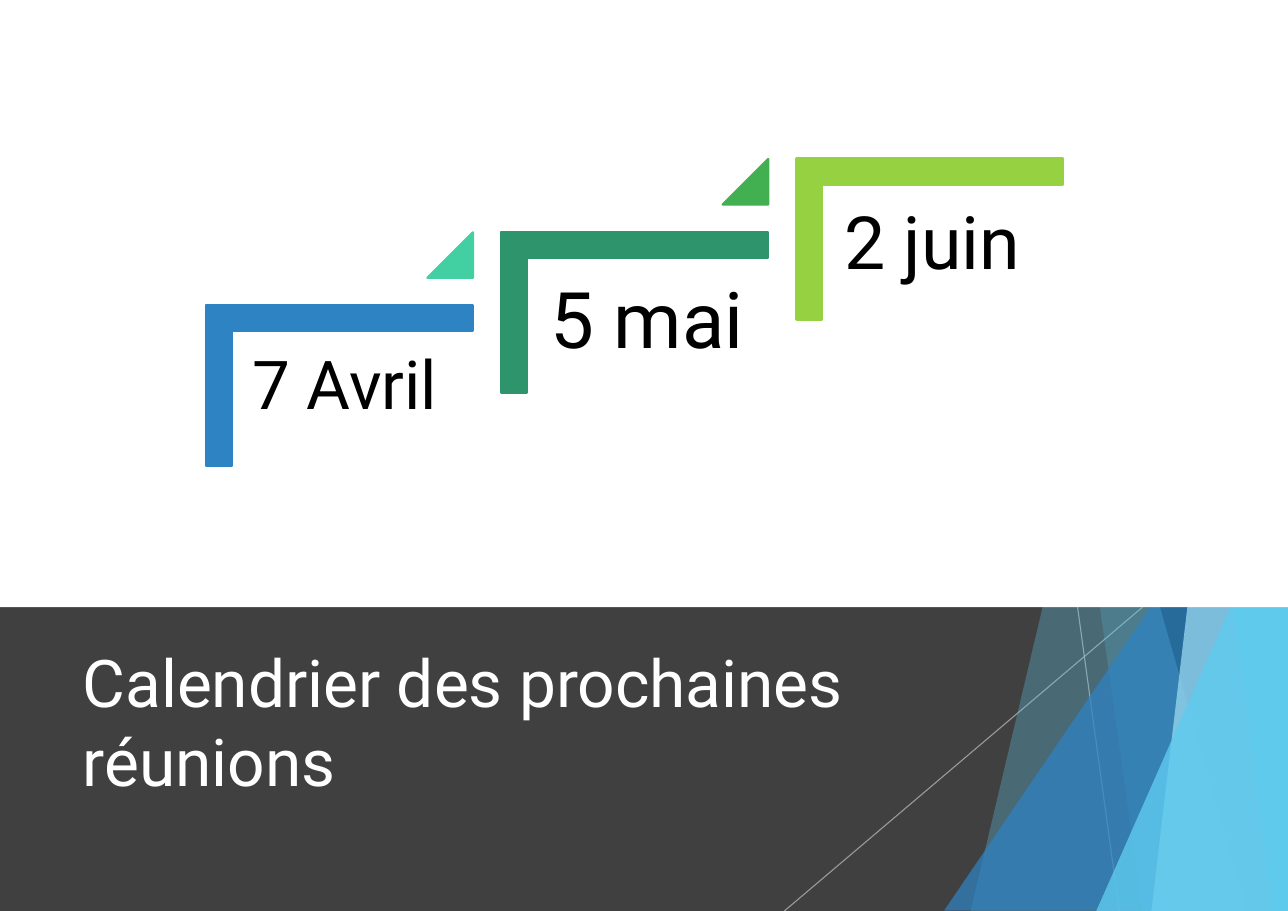
from lxml import etree
from pptx import Presentation
from pptx.dml.color import RGBColor
from pptx.enum.shapes import MSO_CONNECTOR, MSO_SHAPE
from pptx.enum.text import MSO_ANCHOR, MSO_AUTO_SIZE, PP_ALIGN
from pptx.oxml.ns import qn
from pptx.util import Pt

RECT = MSO_SHAPE.RECTANGLE
CORNER = MSO_SHAPE.CORNER
WEDGE = MSO_SHAPE.ISOSCELES_TRIANGLE
STRAIGHT = MSO_CONNECTOR.STRAIGHT
MIDDLE = MSO_ANCHOR.MIDDLE
LEFT = PP_ALIGN.LEFT
FIXED = MSO_AUTO_SIZE.NONE

FONT = "Roboto"
WIDTH, HEIGHT = 841.68, 595.44
SPLIT = 396.9

COLORS = {
    "white": "FFFFFF",
    "black": "000000",
    "panel": "404040",
    "ray": "BFBFBF",
    "sky": "5FCBEF",
    "pale": "9FE0F5",
    "blue": "2E83C3",
    "navy": "226292",
    "mint": "42D0A2",
    "teal": "2E946B",
    "green": "42B051",
    "lime": "96D141",
}

# Text, size, inset, bracket color, color of the wedge leading to the next step
STEPS = [
    ("7 Avril", 44, 12.9, "blue", "mint"),
    ("5 mai", 51, 14.9, "teal", "green"),
    ("2 juin", 48, 14.1, "lime", None),
]
STEP_X, STEP_Y = 169.2, 164.9
RUN, RISE = 192.9, 47.9


def rgb(name):
    return RGBColor.from_string(COLORS[name])


def paint(fill, color, alpha=100):
    """Set a solid fill with its opacity in percent."""
    fill.solid()
    fill.fore_color.rgb = rgb(color)
    if alpha < 100:
        node = fill._xPr.find(".//" + qn("a:srgbClr"))
        etree.SubElement(node, qn("a:alpha"), val=str(alpha * 1000))


def finish(shape, color, alpha=100, edge=0):
    shape.shadow.inherit = False
    paint(shape.fill, color, alpha)
    if edge:
        shape.line.width = Pt(edge)
        shape.line.color.rgb = rgb(color)
    else:
        shape.line.fill.background()


def add_form(slide, kind, box, color, alpha=100, edge=0, adjust=()):
    shape = slide.shapes.add_shape(kind, *map(Pt, box))
    for i, value in enumerate(adjust):
        shape.adjustments[i] = value
    finish(shape, color, alpha, edge)
    return shape


def add_shard(slide, top, base, color, alpha):
    """Fill from a slanted left edge to the right side of the slide."""
    points = [(WIDTH, 0), (WIDTH, HEIGHT), (base, HEIGHT)]
    form = slide.shapes.build_freeform(Pt(top), 0)
    form.add_line_segments([(Pt(x), Pt(y)) for x, y in points], close=True)
    finish(form.convert_to_shape(), color, alpha)


def add_ray(slide, top, base):
    ray = slide.shapes.add_connector(
        STRAIGHT, Pt(top), Pt(SPLIT), Pt(base), Pt(HEIGHT))
    ray.line.width = Pt(0.75)
    paint(ray.line.fill, "ray", 70)
    etree.SubElement(ray._element.spPr, qn("a:effectLst"))


def style(par, size, color):
    par.font.name = FONT
    par.font.size = Pt(size)
    par.font.color.rgb = rgb(color)
    par.alignment = LEFT


def add_label(slide, box, text, size, inset):
    frame = slide.shapes.add_textbox(*map(Pt, box)).text_frame
    frame.word_wrap = True
    frame.margin_left = frame.margin_right = Pt(inset)
    frame.margin_top = frame.margin_bottom = Pt(inset)
    frame.text = text
    par = frame.paragraphs[0]
    par.line_spacing = 0.9
    style(par, size, "black")


def add_step(slide, x, y, text, size, inset, color, next_color):
    bracket = add_form(slide, CORNER, (x, y, 105.1, 174.2), color,
                       edge=1.5, adjust=(0.161, 0.161))
    bracket.rotation = 90
    add_label(slide, (x - 17.3, y + 51.8, 157.7, 138.2), text, size, inset)
    if next_color:
        add_form(slide, WEDGE, (x + 110.2, y - 13, 29.7, 29.7),
                 next_color, edge=1.5, adjust=(1,))


def add_title(slide, text):
    title = slide.shapes.title
    title.left, title.top = Pt(46.8), Pt(414)
    title.width, title.height = Pt(593.3), Pt(114.5)
    frame = title.text_frame
    frame.text = text
    frame.word_wrap = True
    frame.auto_size = FIXED
    frame.vertical_anchor = MIDDLE
    style(frame.paragraphs[0], 43, "white")
    title._element.getparent().append(title._element)


def add_facets(slide):
    add_ray(slide, 704.2, 731.5)
    add_ray(slide, 746.6, 512.6)
    add_shard(slide, 775.4, 634.3, "sky", 30)
    add_shard(slide, 663.1, 746.6, "sky", 20)
    add_form(slide, WEDGE, (617, 264.2, 225, 331), "blue", 72, adjust=(1,))
    add_shard(slide, 644.4, 815, "navy", 70)
    add_shard(slide, 823, 752.4, "pale", 70)
    add_shard(slide, 755.3, 831.6, "sky", 65)
    add_form(slide, WEDGE, (716.4, 311.8, 125.3, 283.7), "sky", 80, adjust=(1,))


def main():
    deck = Presentation()
    deck.slide_width, deck.slide_height = Pt(WIDTH), Pt(HEIGHT)
    slide = deck.slides.add_slide(deck.slide_layouts[5])
    add_form(slide, RECT, (0, SPLIT, WIDTH, HEIGHT - SPLIT), "panel")
    add_facets(slide)
    add_title(slide, "Calendrier des prochaines réunions")
    add_form(slide, RECT, (0, 0, WIDTH, SPLIT), "white")
    for i, step in enumerate(STEPS):
        add_step(slide, STEP_X + i * RUN, STEP_Y - i * RISE, *step)
    deck.save("out.pptx")


if __name__ == "__main__":
    main()
